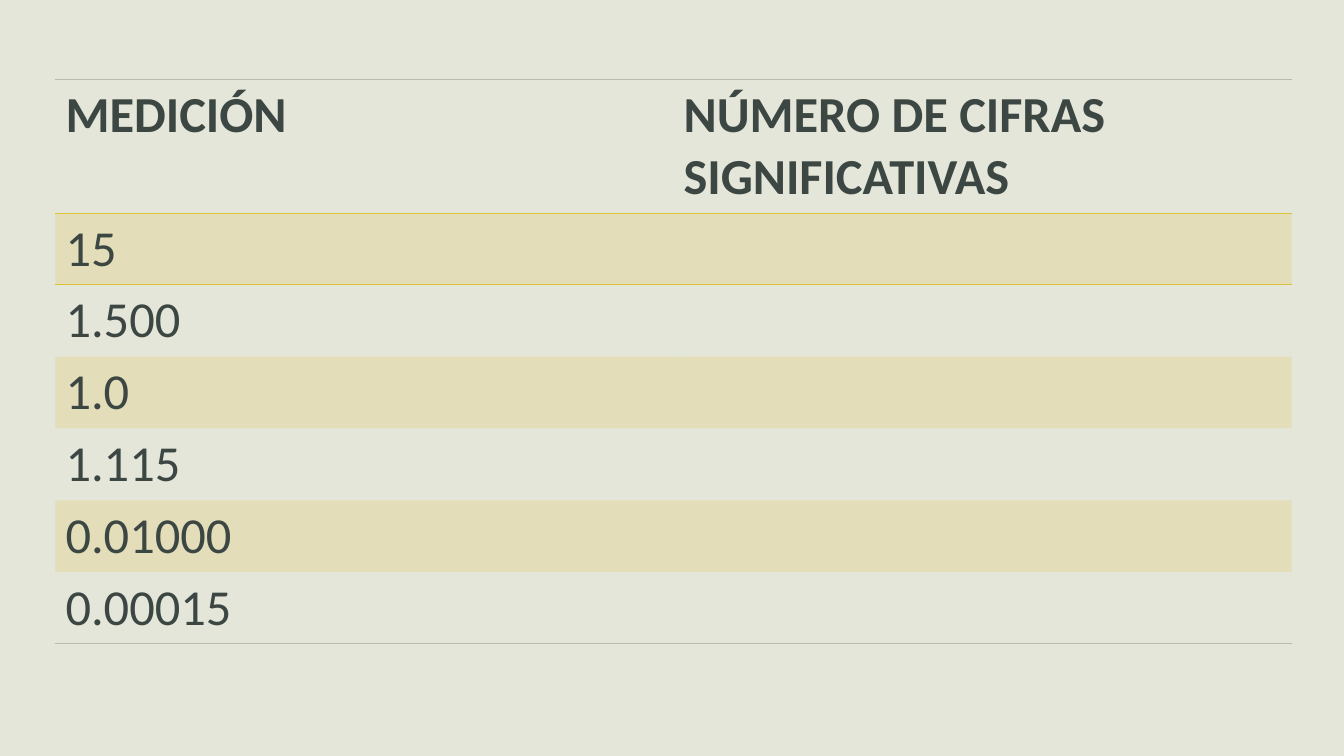
"""Builds a slide with a table of measurements and their significant figures."""
from dataclasses import dataclass

from lxml import etree
from pptx import Presentation
from pptx.dml.color import RGBColor
from pptx.oxml.ns import qn
from pptx.util import Inches, Pt

HEADS = ["MEDICIÓN", "NÚMERO DE CIFRAS SIGNIFICATIVAS"]
VALUES = ["15", "1.500", "1.0", "1.115", "0.01000", "0.00015"]
ROWS = [HEADS] + [[value, ""] for value in VALUES]
PLAIN_STYLE = "{2D5ABB26-0587-4C30-8999-92F81FD0307C}"


@dataclass(frozen=True)
class Theme:
    back: str = "E5E6DA"
    ink: str = "3C4743"
    gold: str = "DDC237"
    edge: str = "B9BBAE"
    font: str = "Calibri"
    size: int = 36
    alpha: int = 20


THEME = Theme()
LEFT, TOP, COL_W = 0.55, 0.79, 6.13
HEAD_H, ROW_H = 1.32, 0.71


def add_rule(cell, side, color):
    line = etree.SubElement(cell._tc.get_or_add_tcPr(), qn(f"a:{side}"), w=str(Pt(1)))
    fill = etree.SubElement(line, qn("a:solidFill"))
    etree.SubElement(fill, qn("a:srgbClr"), val=color)


def tint(cell):
    cell.fill.solid()
    cell.fill.fore_color.rgb = RGBColor.from_string(THEME.gold)
    color = cell._tc.tcPr.find(f"{qn('a:solidFill')}/{qn('a:srgbClr')}")
    etree.SubElement(color, qn("a:alpha"), val=str(THEME.alpha * 1000))


def write(cell, text, bold):
    run = cell.text_frame.paragraphs[0].add_run()
    run.text = text
    run.font.name = THEME.font
    run.font.size = Pt(THEME.size)
    run.font.bold = bold
    run.font.color.rgb = RGBColor.from_string(THEME.ink)


def add_grid(slide):
    height = HEAD_H + ROW_H * len(VALUES)
    frame = slide.shapes.add_table(
        len(ROWS), len(HEADS), Inches(LEFT), Inches(TOP),
        Inches(COL_W * len(HEADS)), Inches(height))
    table = frame.table
    table._tbl.tblPr.find(qn("a:tableStyleId")).text = PLAIN_STYLE
    for col in table.columns:
        col.width = Inches(COL_W)
    last = len(ROWS) - 1
    for r, texts in enumerate(ROWS):
        table.rows[r].height = Inches(ROW_H if r else HEAD_H)
        for c, text in enumerate(texts):
            cell = table.cell(r, c)
            if r == 0:
                add_rule(cell, "lnT", THEME.edge)
                add_rule(cell, "lnB", THEME.gold)
            elif r == 1:
                add_rule(cell, "lnT", THEME.gold)
            elif r == last:
                add_rule(cell, "lnB", THEME.edge)
            if r % 2:
                tint(cell)
            else:
                cell.fill.background()
            if text:
                write(cell, text, r == 0)


def main():
    deck = Presentation()
    deck.slide_width, deck.slide_height = Inches(13.33), Inches(7.5)
    slide = deck.slides.add_slide(deck.slide_layouts[6])
    slide.background.fill.solid()
    slide.background.fill.fore_color.rgb = RGBColor.from_string(THEME.back)
    add_grid(slide)
    deck.save("out.pptx")


if __name__ == "__main__":
    main()
